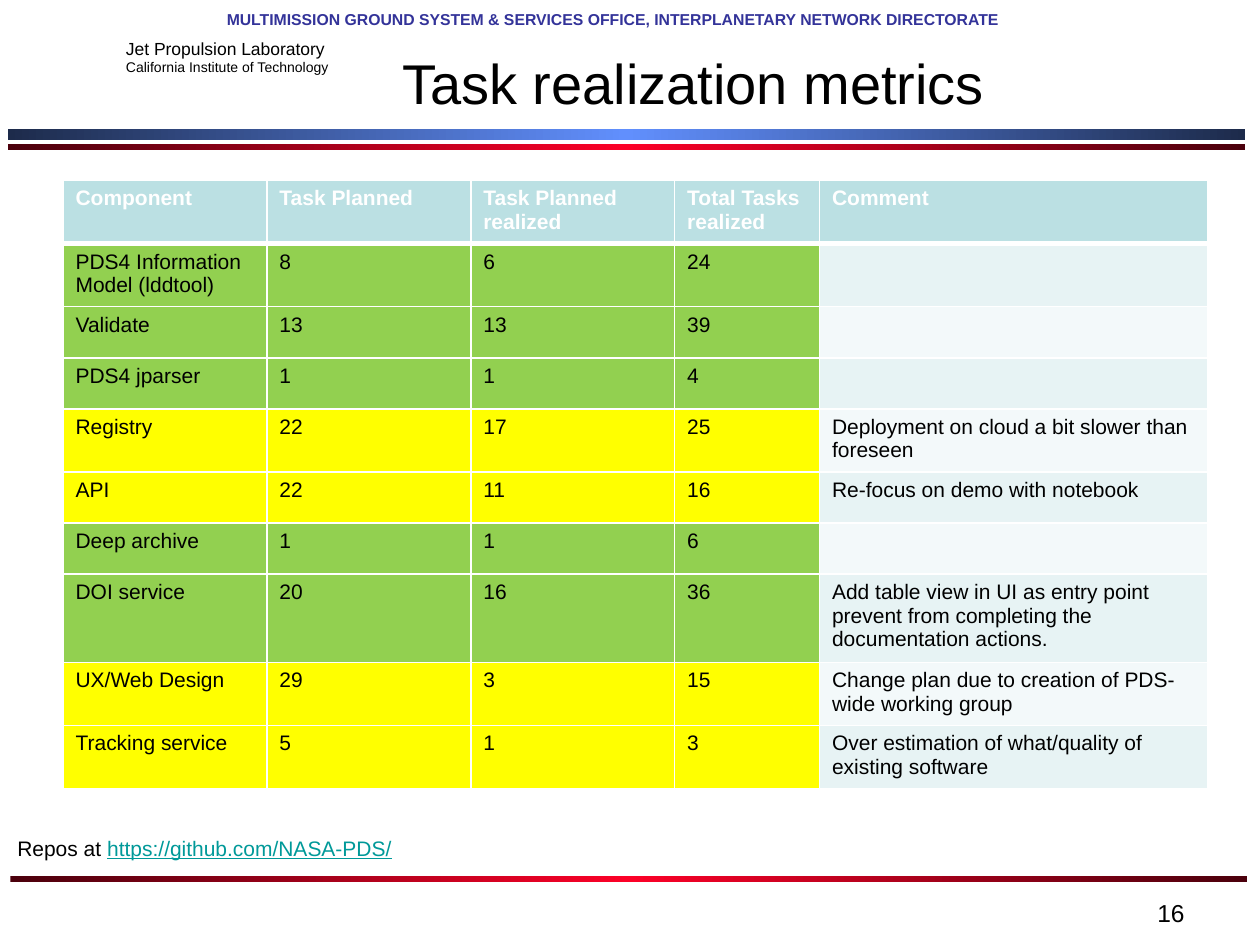
from copy import deepcopy

from lxml.etree import SubElement
from pptx import Presentation
from pptx.dml.color import RGBColor
from pptx.enum.shapes import MSO_SHAPE as Shape
from pptx.enum.text import MSO_ANCHOR as Anchor, PP_ALIGN as Align
from pptx.oxml.ns import qn
from pptx.util import Cm, Pt

BLACK = RGBColor(0x00, 0x00, 0x00)
WHITE = RGBColor(0xFF, 0xFF, 0xFF)
INDIGO = RGBColor(0x33, 0x33, 0x99)
TEAL = RGBColor(0x00, 0x99, 0x99)
NAVY = RGBColor(0x1D, 0x2B, 0x4B)
BLUE = RGBColor(0x61, 0x8F, 0xFD)
MAROON = RGBColor(0x4B, 0x00, 0x0C)
RED = RGBColor(0xFC, 0x01, 0x28)
HEADER = RGBColor(0xBB, 0xE0, 0xE3)
BANDS = [RGBColor(0xE7, 0xF3, 0xF4), RGBColor(0xF3, 0xF9, 0xFA)]
GREEN = RGBColor(0x92, 0xD0, 0x50)
YELLOW = RGBColor(0xFF, 0xFF, 0x00)

COLUMN_WIDTHS = [4.11, 4.11, 4.11, 2.92, 7.82]
HEADINGS = ["Component", "Task Planned", "Task Planned realized",
            "Total Tasks realized", "Comment"]
TASKS = [
    (GREEN, "PDS4 Information Model (lddtool)", 8, 6, 24, ""),
    (GREEN, "Validate", 13, 13, 39, ""),
    (GREEN, "PDS4 jparser", 1, 1, 4, ""),
    (YELLOW, "Registry", 22, 17, 25, "Deployment on cloud a bit slower than foreseen"),
    (YELLOW, "API", 22, 11, 16, "Re-focus on demo with notebook"),
    (GREEN, "Deep archive", 1, 1, 6, ""),
    (GREEN, "DOI service", 20, 16, 36,
     "Add table view in UI as entry point prevent from completing the documentation actions."),
    (YELLOW, "UX/Web Design", 29, 3, 15,
     "Change plan due to creation of PDS-wide working group"),
    (YELLOW, "Tracking service", 5, 1, 3,
     "Over estimation of what/quality of existing software"),
]


class SlideBuilder:
    """Holds the text style and the current slide, and adds elements to it."""

    font = "Arial"

    def __init__(self, page):
        self.page = page

    def span(self, para, text, size, color=BLACK, bold=False, underline=False):
        span = para.add_run()
        span.text = text
        span.font.name = self.font
        span.font.size = Pt(size)
        span.font.bold = bold
        span.font.underline = underline
        span.font.color.rgb = color

    def text(self, left, top, width, height, lines, align=Align.LEFT,
             anchor=Anchor.TOP, padded=True):
        box = self.page.shapes.add_textbox(Cm(left), Cm(top), Cm(width), Cm(height))
        frame = box.text_frame
        frame.word_wrap = True
        frame.vertical_anchor = anchor
        if not padded:
            frame.margin_left = frame.margin_right = 0
            frame.margin_top = frame.margin_bottom = 0
        for index, spans in enumerate(lines):
            para = frame.add_paragraph() if index else frame.paragraphs[0]
            para.alignment = align
            for span in spans:
                self.span(para, *span)

    def gradient_bar(self, left, top, height, edge, middle):
        bar = self.page.shapes.add_shape(
            Shape.RECTANGLE, Cm(left), Cm(top), Cm(24.94), Cm(height))
        bar.shadow.inherit = False
        bar.line.fill.background()
        bar.fill.gradient()
        bar.fill.gradient_angle = 0
        stops = bar.element.spPr.find(".//" + qn("a:gsLst"))
        stops.append(deepcopy(stops[-1]))
        colors = [edge, middle, edge]
        for stop, position, color in zip(bar.fill.gradient_stops, [0, 0.5, 1], colors):
            stop.position = position
            stop.color.rgb = color

    def cell(self, cell, text, fill, color, bold, top, bottom):
        properties = cell._tc.get_or_add_tcPr()
        for side, points in [("L", 1), ("R", 1), ("T", top), ("B", bottom)]:
            line = SubElement(properties, qn(f"a:ln{side}"), w=str(Pt(points)))
            solid = SubElement(line, qn("a:solidFill"))
            SubElement(solid, qn("a:srgbClr"), val=str(WHITE))
        cell.fill.solid()
        cell.fill.fore_color.rgb = fill
        para = cell.text_frame.paragraphs[0]
        if text:
            self.span(para, text, 12, color, bold)
        else:
            para.font.size = Pt(12)

    def table(self, left, top, row_height, widths, headings, tasks):
        count = len(tasks) + 1
        table = self.page.shapes.add_table(
            count, len(widths), Cm(left), Cm(top),
            Cm(sum(widths)), Cm(row_height * count)).table
        for column, width in zip(table.columns, widths):
            column.width = Cm(width)
        for row in table.rows:
            row.height = Cm(row_height)
        for column, heading in enumerate(headings):
            self.cell(table.cell(0, column), heading, HEADER, WHITE, True, 1, 3)
        for row, (status, *values) in enumerate(tasks, 1):
            fills = [status] * (len(widths) - 1) + [BANDS[(row - 1) % 2]]
            for column, (value, fill) in enumerate(zip(values, fills)):
                self.cell(table.cell(row, column), str(value), fill, BLACK, False,
                          3 if row == 1 else 1, 1)


def main():
    deck = Presentation()
    deck.slide_width, deck.slide_height = Cm(25.4), Cm(19.05)
    slide = SlideBuilder(deck.slides.add_slide(deck.slide_layouts[6]))

    slide.gradient_bar(0.16, 2.61, 0.21, NAVY, BLUE)
    slide.gradient_bar(0.16, 2.9, 0.13, MAROON, RED)
    slide.gradient_bar(0.21, 17.66, 0.13, MAROON, RED)

    slide.text(4.09, 0.2, 16.51, 0.43, [[(
        "MULTIMISSION GROUND SYSTEM & SERVICES OFFICE, INTERPLANETARY NETWORK DIRECTORATE",
        9, INDIGO, True)]], Align.CENTER, padded=False)
    slide.text(2.29, 0.64, 4.7, 1.02, [
        [("Jet Propulsion Laboratory", 10)],
        [("California Institute of Technology", 8)]])
    slide.text(6.78, 0.76, 14.4, 1.78, [[("Task realization metrics", 32)]],
               Align.CENTER, Anchor.MIDDLE)
    slide.table(1.27, 3.64, 1.03, COLUMN_WIDTHS, HEADINGS, TASKS)
    slide.text(0.1, 16.71, 8.26, 0.76, [[
        ("Repos at ", 12),
        ("https://github.com/NASA-PDS/", 12, TEAL, False, True)]])
    slide.text(18.21, 17.98, 5.92, 0.69, [[("16", 14)]], Align.RIGHT)

    deck.save("out.pptx")


if __name__ == "__main__":
    main()
